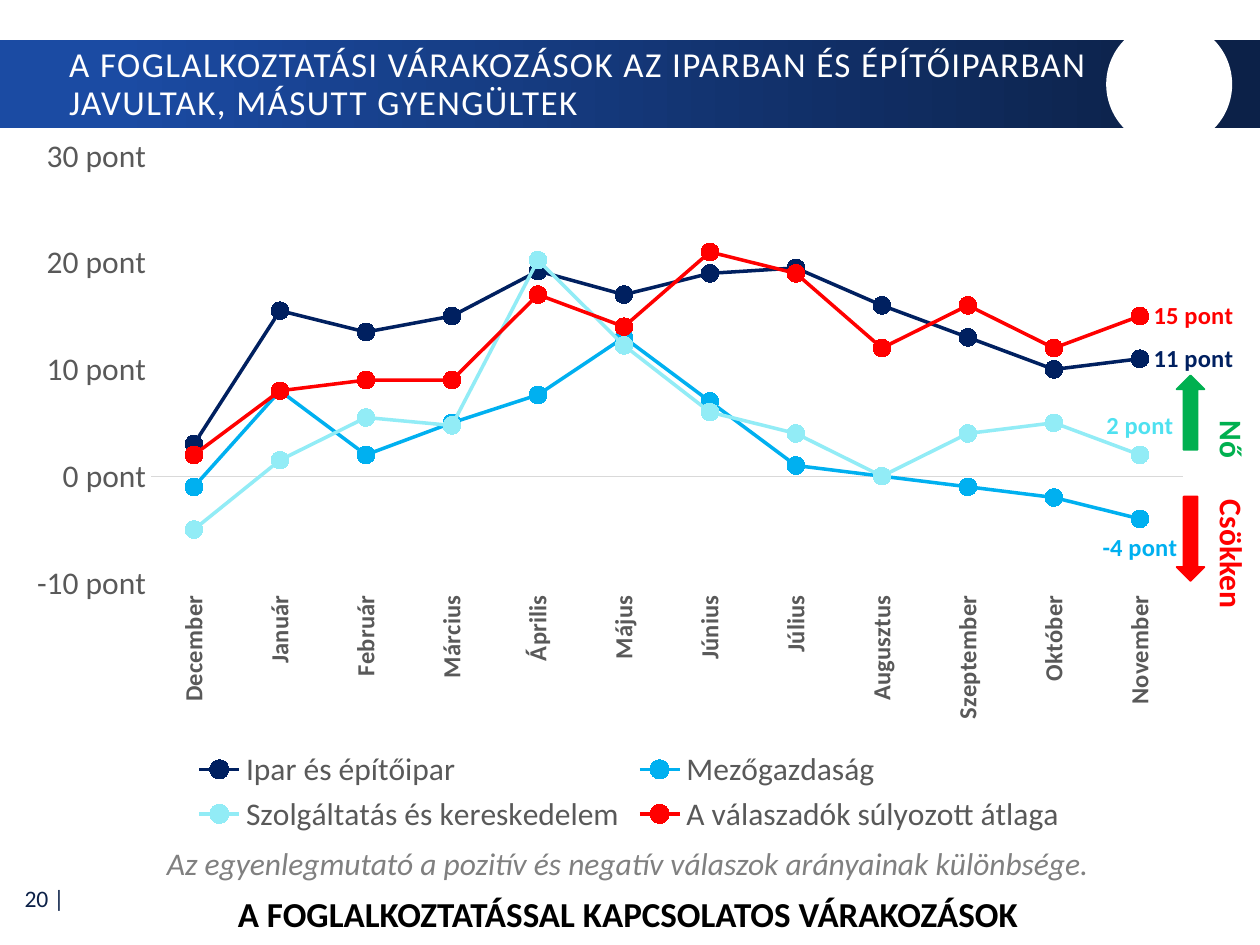
from lxml.etree import SubElement
from pptx import Presentation
from pptx.chart.data import CategoryChartData
from pptx.dml.color import RGBColor
from pptx.enum.chart import (XL_CHART_TYPE, XL_LABEL_POSITION, XL_LEGEND_POSITION,
                             XL_MARKER_STYLE, XL_TICK_LABEL_POSITION, XL_TICK_MARK)
from pptx.enum.shapes import MSO_SHAPE
from pptx.enum.text import MSO_ANCHOR, PP_ALIGN
from pptx.oxml import parse_xml
from pptx.oxml.ns import nsdecls, qn
from pptx.util import Cm, Pt

FONT = "Calibri"
COLORS = {
    "band_start": "1B4BA3", "band_end": "0C2148", "white": "FFFFFF", "black": "000000",
    "note": "808080", "axis_text": "595959", "axis_line": "D9D9D9",
    "rise": "00B050", "fall": "FF0000", "industry": "002060", "farming": "00B0F0",
    "services": "92ECF6", "services_label": "4FE1F0", "average": "FF0000",
}
MONTHS = ["December", "Január", "Február", "Március", "Április", "Május", "Június",
          "Július", "Augusztus", "Szeptember", "Október", "November"]
LABEL = XL_LABEL_POSITION
SECTORS = [
    ("Ipar és építőipar", [3, 15.5, 13.5, 15, 19.22, 17, 19, 19.5, 16, 13, 10, 11],
     "industry", "industry", LABEL.RIGHT),
    ("Mezőgazdaság", [-1, 8, 2, 5, 7.62, 13, 7, 1, 0, -1, -2, -4],
     "farming", "farming", LABEL.BELOW),
    ("Szolgáltatás és kereskedelem", [-5, 1.5, 5.5, 4.75, 20.24, 12.25, 6, 4, 0, 4, 5, 2],
     "services", "services_label", LABEL.ABOVE),
    ("A válaszadók súlyozott átlaga", [2, 8, 9, 9, 17, 14, 21, 19, 12, 16, 12, 15],
     "average", "average", LABEL.RIGHT),
]
POINTS_FORMAT = '0\\ "pont"'


def rgb(name):
    return RGBColor.from_string(COLORS[name])


def style_font(font, size, color, bold=False, italic=False):
    font.name, font.size, font.bold, font.italic = FONT, Pt(size), bold, italic
    font.color.rgb = rgb(color)


def write(paragraph, text, size, color, align=PP_ALIGN.LEFT, spacing=None, **style):
    paragraph.alignment = align
    run = paragraph.add_run()
    run.text = text
    style_font(run.font, size, color, **style)
    if spacing is not None:
        run.font._element.set("spc", str(spacing))


def add_frame(slide, box, anchor=MSO_ANCHOR.TOP):
    frame = slide.shapes.add_textbox(*map(Cm, box)).text_frame
    frame.word_wrap = True
    frame.vertical_anchor = anchor
    return frame


def add_solid(slide, preset, box, color, outlined=False):
    solid = slide.shapes.add_shape(preset, *map(Cm, box))
    solid.shadow.inherit = False
    solid.fill.solid()
    solid.fill.fore_color.rgb = rgb(color)
    if outlined:
        solid.line.color.rgb = rgb(color)
        solid.line.width = Pt(1)
    else:
        solid.line.fill.background()
    return solid


def add_header(slide, box):
    left, top, width, height = box
    band = add_solid(slide, MSO_SHAPE.RECTANGLE, box, "band_start")
    band.fill.gradient()
    band.fill.gradient_angle = 0
    for stop, position, color in zip(band.fill.gradient_stops, (0.09, 0.95),
                                     ("band_start", "band_end")):
        stop.position = position
        stop.color.rgb = rgb(color)
    add_solid(slide, MSO_SHAPE.OVAL, (left + 22.3, top - 0.38, 2.54, 2.54), "white")

    title = slide.shapes.title
    title.element.getparent().append(title.element)
    title.left, title.top = Cm(left + 1.14), Cm(top + 0.05)
    title.width, title.height = Cm(width - 3.96), Cm(height - 0.08)
    title.text_frame.word_wrap = True
    title.text_frame.vertical_anchor = MSO_ANCHOR.MIDDLE
    heading = title.text_frame.paragraphs[0]
    heading.line_spacing = 0.9
    write(heading, "A FOGLALKOZTATÁSI VÁRAKOZÁSOK AZ IPARBAN ÉS ÉPÍTŐIPARBAN "
          "JAVULTAK, MÁSUTT GYENGÜLTEK", 20, "white", spacing=80)


def format_axes(chart):
    months, points = chart.category_axis, chart.value_axis
    for axis, size, bold in ((months, 14, True), (points, 18, False)):
        axis.major_tick_mark = axis.minor_tick_mark = XL_TICK_MARK.NONE
        axis.has_major_gridlines = False
        style_font(axis.tick_labels.font, size, "axis_text", bold=bold)
    months.tick_label_position = XL_TICK_LABEL_POSITION.LOW
    months.format.line.color.rgb = rgb("axis_line")
    months.format.line.width = Pt(0.75)
    chart.element.find(".//" + qn("c:catAx")).find(
        qn("c:txPr")).find(qn("a:bodyPr")).set("rot", "-5400000")
    points.minimum_scale, points.maximum_scale, points.major_unit = -10, 30, 10
    points.tick_labels.number_format = POINTS_FORMAT
    points.tick_labels.number_format_is_linked = False
    points.format.line.fill.background()


def place_plot(chart, x, y, w, h):
    plot_area = chart.element.find(".//" + qn("c:plotArea"))
    for old in plot_area.findall(qn("c:layout")):
        plot_area.remove(old)
    layout = parse_xml(f"<c:layout {nsdecls('c')}><c:manualLayout/></c:layout>")
    settings = [("layoutTarget", "inner"), ("xMode", "edge"), ("yMode", "edge"),
                ("x", x), ("y", y), ("w", w), ("h", h)]
    for tag, value in settings:
        SubElement(layout[0], qn("c:" + tag)).set("val", str(value))
    plot_area.insert(0, layout)


def add_expectations(slide, box):
    data = CategoryChartData(number_format=POINTS_FORMAT)
    data.categories = MONTHS
    for name, values, *_ in SECTORS:
        data.add_series(name, values)
    chart = slide.shapes.add_chart(XL_CHART_TYPE.LINE_MARKERS, *map(Cm, box), data).chart
    style_font(chart.font, 18, "black")
    chart.has_title = False
    chart.plots[0].vary_by_categories = False
    chart.has_legend = True
    chart.legend.position = XL_LEGEND_POSITION.BOTTOM
    chart.legend.include_in_layout = False
    style_font(chart.legend.font, 18, "axis_text")
    format_axes(chart)
    place_plot(chart, 0.12, 0.04, 0.82, 0.6)

    for series, (_, values, color, label_color, position) in zip(chart.plots[0].series, SECTORS):
        series.smooth = False
        series.format.line.color.rgb = rgb(color)
        series.format.line.width = Pt(2)
        marker = series.marker
        marker.style, marker.size = XL_MARKER_STYLE.CIRCLE, 10
        marker.format.fill.solid()
        marker.format.fill.fore_color.rgb = rgb(color)
        marker.format.line.color.rgb = rgb(color)
        latest = series.points[len(values) - 1].data_label
        style_font(latest.font, 14, label_color, bold=True)
        latest.position = position


def add_direction_key(slide, box):
    left, top, width, height = box
    add_solid(slide, MSO_SHAPE.UP_ARROW, (left, top, 0.56, 1.5), "rise", outlined=True)
    falling = add_solid(slide, MSO_SHAPE.UP_ARROW, (left, top + 2.44, 0.56, 1.7),
                        "fall", outlined=True)
    falling.rotation = 180
    frame = add_frame(slide, (left + 0.36, top + 0.66, width - 0.36, height - 0.66))
    frame._txBody.bodyPr.set("vert", "vert")
    words = frame.paragraphs[0]
    tabs = SubElement(words._p.get_or_add_pPr(), qn("a:tabLst"))
    SubElement(tabs, qn("a:tab"), pos=str(Cm(1.6)), algn="l")
    write(words, "Nő\t", 18, "rise", bold=True)
    write(words, "Csökken", 18, "fall", bold=True)


def add_caption(slide, box):
    frame = add_frame(slide, box)
    note = frame.paragraphs[0]
    note.space_after = Pt(6)
    write(note, "Az egyenlegmutató a pozitív és negatív válaszok arányainak különbsége.",
          18, "note", PP_ALIGN.CENTER, italic=True)
    write(frame.add_paragraph(), "A FOGLALKOZTATÁSSAL KAPCSOLATOS VÁRAKOZÁSOK",
          20, "black", PP_ALIGN.CENTER, bold=True)


def add_page_number(slide, box):
    frame = add_frame(slide, box, MSO_ANCHOR.MIDDLE)
    write(frame.paragraphs[0], "20 |", 13.5, "band_end", PP_ALIGN.RIGHT)


def main():
    deck = Presentation()
    deck.slide_width, deck.slide_height = Cm(25.4), Cm(19.05)
    slide = deck.slides.add_slide(deck.slide_layouts[5])
    add_page_number(slide, (0.03, 17.63, 1.52, 0.94))
    add_header(slide, (0, 0.81, 25.4, 1.78))
    add_caption(slide, (2.13, 16.89, 21.06, 2.08))
    add_direction_key(slide, (23.72, 7.57, 1.63, 5.08))
    add_expectations(slide, (0, 2.57, 25.37, 14.35))
    deck.save("out.pptx")


if __name__ == "__main__":
    main()
